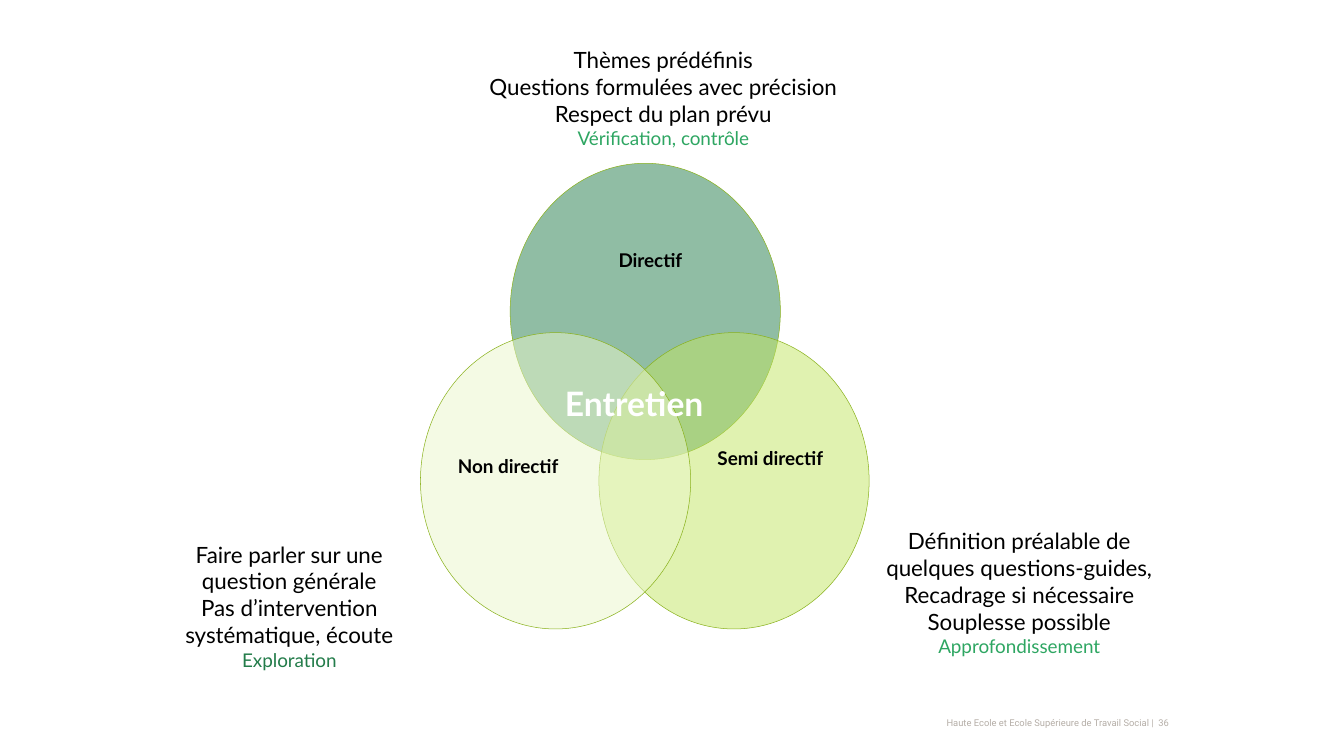
from lxml.etree import SubElement
from pptx import Presentation
from pptx.dml.color import RGBColor
from pptx.enum.shapes import MSO_SHAPE
from pptx.enum.text import MSO_ANCHOR, PP_ALIGN
from pptx.oxml.ns import qn
from pptx.util import Inches, Pt

BLACK, GREEN, DARK_GREEN = "000000", "2EA662", "237C4A"


def rgb(color):
    return RGBColor.from_string(color)


def add_circle(s, left, top, color):
    """Half-transparent circle of the Venn diagram."""
    sp = s.shapes.add_shape(MSO_SHAPE.OVAL, Inches(left), Inches(top),
                            Inches(2.68), Inches(2.94))
    sp.shadow.inherit = False
    sp.fill.solid()
    sp.fill.fore_color.rgb = rgb(color)
    fill_color = sp.fill._xPr.find(qn("a:solidFill"))[0]
    SubElement(fill_color, qn("a:alpha"), val="50000")
    sp.line.color.rgb = rgb("8AB21D")
    sp.line.width = Pt(0.37)


def write(p, text, size=16, color=BLACK, bold=False, font="Lato",
          align=PP_ALIGN.CENTER):
    p.alignment = align
    r = p.add_run()
    r.text = text
    r.font.name = font
    r.font.size = Pt(size)
    r.font.bold = bold
    r.font.color.rgb = rgb(color)


def add_box(s, center_x, center_y, width, height):
    """Text frame without margins, placed by its centre."""
    sp = s.shapes.add_textbox(Inches(center_x - width / 2), Inches(center_y - height / 2),
                              Inches(width), Inches(height))
    tf = sp.text_frame
    tf.word_wrap = True
    tf.vertical_anchor = MSO_ANCHOR.MIDDLE
    tf.margin_left = tf.margin_right = tf.margin_top = tf.margin_bottom = 0
    return tf


def add_label(s, center_x, center_y, text, width=1.75, height=0.33, **fmt):
    write(add_box(s, center_x, center_y, width, height).paragraphs[0], text, **fmt)


def add_description(s, center_x, center_y, lines, purpose, color):
    tf = add_box(s, center_x, center_y, 3.8, 1.4)
    for i, line in enumerate(lines):
        write(tf.paragraphs[0] if i == 0 else tf.add_paragraph(), line)
    write(tf.add_paragraph(), purpose, size=13.5, color=color)


def main():
    prs = Presentation()
    prs.slide_width, prs.slide_height = Inches(13.33), Inches(7.5)
    s = prs.slides.add_slide(prs.slide_layouts[6])

    add_circle(s, 5.06, 1.62, DARK_GREEN)
    add_circle(s, 5.94, 3.3, "C2E663")
    add_circle(s, 4.17, 3.3, "EBF7CB")

    add_description(s, 6.58, 0.97, [
        "Thèmes prédéfinis",
        "Questions formulées avec précision",
        "Respect du plan prévu",
    ], "Vérification, contrôle", GREEN)
    add_description(s, 2.87, 6.01, [
        "Faire parler sur une",
        "question générale",
        "Pas d’intervention",
        "systématique, écoute",
    ], "Exploration", DARK_GREEN)
    add_description(s, 10.11, 5.88, [
        "Définition préalable de",
        "quelques questions-guides,",
        "Recadrage si nécessaire",
        "Souplesse possible",
    ], "Approfondissement", GREEN)

    for x, y, text in [(6.45, 2.58, "Directif"),
                       (5.04, 4.62, "Non directif"),
                       (7.64, 4.54, "Semi directif")]:
        add_label(s, x, y, text, size=13.5, bold=True)
    add_label(s, 6.29, 4, "Entretien", width=2, height=0.5,
              size=24, color="FFFFFF", bold=True)
    add_label(s, 9.95, 7.17, "Haute Ecole et Ecole Supérieure de Travail Social |  36",
              width=3.3, height=0.14, size=6.7, color="B5AEA7", font="Roboto",
              align=PP_ALIGN.RIGHT)

    prs.save("out.pptx")


if __name__ == "__main__":
    main()
